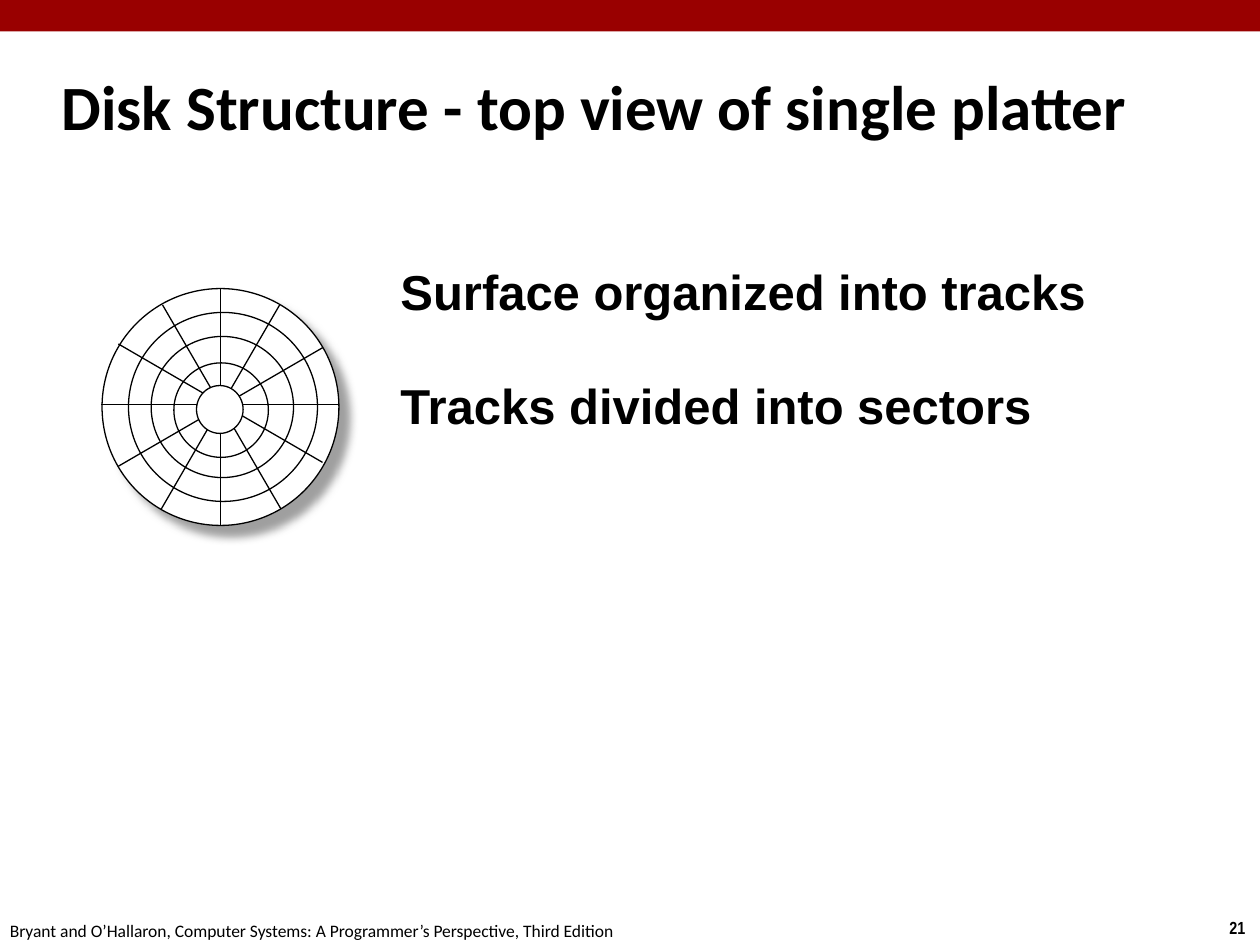
import math
from dataclasses import dataclass

import lxml.etree
import pptx
import pptx.dml.color
import pptx.enum.shapes
import pptx.enum.text
import pptx.oxml.ns
import pptx.util

SCALE = 9144
HUE = {"bar": "990000", "ink": "000000", "disk": "FFFFFF", "shade": "808080"}
MID = (175, 323)
REACH = 94
ANCHOR = pptx.enum.text.MSO_ANCHOR
FIT = pptx.enum.text.MSO_AUTO_SIZE
KIND = pptx.enum.shapes.MSO_SHAPE


@dataclass
class Box:
    left: int
    top: int
    width: int
    height: int


@dataclass
class Label:
    text: str
    box: Box
    size: int
    font: str
    bold: bool
    wrap: bool
    anchor: ANCHOR


@dataclass
class Spoke:
    angle: int
    right: int = 0
    down: int = 0


@dataclass
class Ring:
    box: Box
    solid: bool = False


TITLE = Label("Disk Structure - top view of single platter",
              Box(39, 42, 928, 83), 36, "Calibri", True, True, ANCHOR.MIDDLE)
LABELS = [
    Label("21", Box(966, 723, 34, 27), 10, "Arial Narrow", True, False, ANCHOR.TOP),
    Label("Bryant and O’Hallaron, Computer Systems: A Programmer’s Perspective, Third Edition",
          Box(-2, 725, 508, 27), 10, "Calibri", False, False, ANCHOR.TOP),
    Label("Surface organized into tracks", Box(308, 167, 592, 92),
          28, "Arial", True, True, ANCHOR.BOTTOM),
    Label("Tracks divided into sectors", Box(308, 258, 625, 92),
          28, "Arial", True, True, ANCHOR.BOTTOM),
]
PLATTER = Ring(Box(81, 229, 188, 188), True)
SPOKES = [Spoke(0), Spoke(30), Spoke(60), Spoke(90, -1, -2),
          Spoke(120, 0, -3), Spoke(150, 1, 0)]
TRACKS = [
    Ring(Box(156, 306, 37, 38), True),
    Ring(Box(102, 248, 150, 150)),
    Ring(Box(120, 267, 113, 112)),
    Ring(Box(138, 288, 75, 75)),
]


def px(count: int) -> int:
    return pptx.util.Emu(count * SCALE)


def rgb(name: str) -> pptx.dml.color.RGBColor:
    return pptx.dml.color.RGBColor.from_string(HUE[name])


def area(box: Box) -> tuple:
    return px(box.left), px(box.top), px(box.width), px(box.height)


def pen(line) -> None:
    line.color.rgb = rgb("ink")
    line.width = pptx.util.Pt(0.75)


def write(shape, label: Label) -> None:
    shape.left, shape.top, shape.width, shape.height = area(label.box)
    frame = shape.text_frame
    frame.auto_size = FIT.NONE
    frame.word_wrap = label.wrap
    frame.vertical_anchor = label.anchor
    para = frame.paragraphs[0]
    para.alignment = pptx.enum.text.PP_ALIGN.LEFT
    run = para.add_run()
    run.text = label.text
    run.font.size = pptx.util.Pt(label.size)
    run.font.name = label.font
    run.font.bold = label.bold
    run.font.color.rgb = rgb("ink")


def draw_ring(slide, ring: Ring):
    shape = slide.shapes.add_shape(KIND.OVAL, *area(ring.box))
    shape.shadow.inherit = False
    if ring.solid:
        shape.fill.solid()
        shape.fill.fore_color.rgb = rgb("disk")
    else:
        shape.fill.background()
    pen(shape.line)
    return shape


def draw_spoke(slide, spoke: Spoke) -> None:
    turn = math.radians(spoke.angle)
    x, y = MID[0] + spoke.right, MID[1] + spoke.down
    dx, dy = round(REACH * math.sin(turn)), round(REACH * math.cos(turn))
    line = slide.shapes.add_connector(
        pptx.enum.shapes.MSO_CONNECTOR.STRAIGHT,
        px(x + dx), px(y - dy), px(x - dx), px(y + dy))
    pen(line.line)
    lxml.etree.SubElement(line._element.spPr, pptx.oxml.ns.qn("a:effectLst"))


def cast_shade(shape) -> None:
    qn = pptx.oxml.ns.qn
    group = shape._element.spPr.find(qn("a:effectLst"))
    shade = lxml.etree.SubElement(
        group, qn("a:outerShdw"), blurRad=str(pptx.util.Pt(5)),
        dist=str(pptx.util.Pt(8.5)), dir=str(45 * 60000),
        algn="ctr", rotWithShape="0")
    tint = lxml.etree.SubElement(shade, qn("a:srgbClr"), val=HUE["shade"])
    lxml.etree.SubElement(tint, qn("a:alpha"), val="75000")


def main() -> None:
    deck = pptx.Presentation()
    deck.slide_width, deck.slide_height = px(1000), px(750)
    slide = deck.slides.add_slide(deck.slide_layouts[5])
    write(slide.shapes.title, TITLE)

    bar = slide.shapes.add_shape(KIND.RECTANGLE, *area(Box(0, 0, 1000, 25)))
    bar.shadow.inherit = False
    bar.fill.solid()
    bar.fill.fore_color.rgb = rgb("bar")
    bar.line.fill.background()

    cast_shade(draw_ring(slide, PLATTER))
    for spoke in SPOKES:
        draw_spoke(slide, spoke)
    for ring in TRACKS:
        draw_ring(slide, ring)
    for label in LABELS:
        write(slide.shapes.add_textbox(*area(label.box)), label)
    deck.save("out.pptx")


if __name__ == "__main__":
    main()
